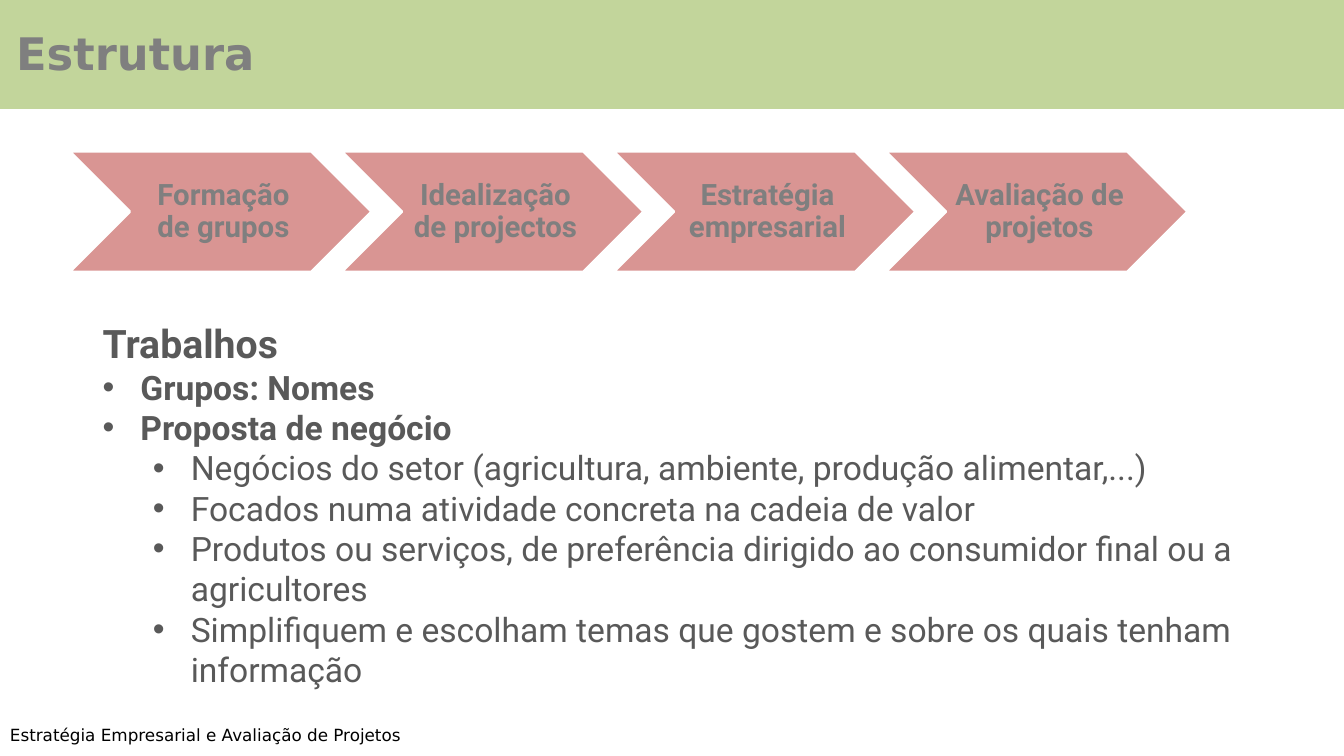
from pptx import Presentation
from pptx.dml.color import RGBColor as Rgb
from pptx.enum.shapes import MSO_SHAPE as Kind
from pptx.enum.text import MSO_ANCHOR as Anchor, PP_ALIGN as Align
from pptx.oxml.ns import qn
from pptx.util import Pt
from lxml.etree import SubElement as Sub

HUES = {"green": "C2D59B", "rose": "D99593", "gray": "7F7F7F",
        "dark": "595959", "black": "000000", "white": "FFFFFF"}
STEPS = ["Formação de grupos", "Idealização de projectos",
         "Estratégia empresarial", "Avaliação de projetos"]
TASKS = [
    (0, "Grupos: Nomes"),
    (0, "Proposta de negócio"),
    (1, "Negócios do setor (agricultura, ambiente, produção alimentar,...)"),
    (1, "Focados numa atividade concreta na cadeia de valor"),
    (1, "Produtos ou serviços, de preferência dirigido ao consumidor final ou a agricultores"),
    (1, "Simplifiquem e escolham temas que gostem e sobre os quais tenham informação"),
]


class Deck:
    sans = "DejaVu Sans"
    body = "Roboto"

    def __init__(self, wide, high):
        self.deck = Presentation()
        self.deck.slide_width, self.deck.slide_height = Pt(wide), Pt(high)
        self.slide = self.deck.slides.add_slide(self.deck.slide_layouts[5])

    def hue(self, name):
        return Rgb.from_string(HUES[name])

    def style(self, para, text, size, face, hue, bold=False, align=Align.LEFT):
        para.text = text
        para.alignment = align
        font = para.font
        font.size, font.name, font.bold = Pt(size), face, bold
        font.color.rgb = self.hue(hue)

    def shape(self, kind, box, fill, line):
        item = self.slide.shapes.add_shape(kind, *map(Pt, box))
        item.shadow.inherit = False
        item.fill.solid()
        item.fill.fore_color.rgb = self.hue(fill)
        item.line.color.rgb = self.hue(line)
        item.line.width = Pt(2)
        return item

    def text(self, box):
        frame = self.slide.shapes.add_textbox(*map(Pt, box)).text_frame
        frame.word_wrap = True
        return frame

    def title(self, text, box):
        item = self.slide.shapes.title
        item.left, item.top, item.width, item.height = map(Pt, box)
        frame = item.text_frame
        frame.word_wrap = True
        frame.vertical_anchor = Anchor.TOP
        self.style(frame.paragraphs[0], text, 32, self.sans, "gray", True)
        self.slide.shapes._spTree.append(item._element)

    def step(self, text, left, top):
        arrow = self.shape(Kind.CHEVRON, (left, top, 216, 86.4), "rose", "white")
        arrow.adjustments[0] = 0.5
        frame = self.text((left + 43.2, top, 129.6, 86.4))
        frame.vertical_anchor = Anchor.MIDDLE
        frame.margin_left = Pt(6.5)
        frame.margin_right = frame.margin_top = frame.margin_bottom = Pt(2.2)
        para = frame.paragraphs[0]
        para.line_spacing = 0.9
        self.style(para, text, 21, self.body, "gray", True, Align.CENTER)

    def bullet(self, frame, level, text):
        para = frame.add_paragraph()
        para.level = level
        props = para._p.get_or_add_pPr()
        props.set("marL", str(Pt(27 + 36 * level)))
        props.set("indent", str(Pt(-27)))
        tint = Sub(props, qn("a:buClr"))
        Sub(tint, qn("a:srgbClr"), val=HUES["dark"])
        Sub(props, qn("a:buFont"), typeface="Arial")
        Sub(props, qn("a:buChar"), char="•")
        self.style(para, text, 24, self.body, "dark", level == 0)


def main():
    deck = Deck(960, 540)
    deck.shape(Kind.RECTANGLE, (-3.6, -2.2, 963.6, 79.2), "green", "green")
    foot = deck.text((0, 514, 300, 21.8))
    deck.style(foot.paragraphs[0], "Estratégia Empresarial e Avaliação de Projetos",
               12, deck.sans, "black")
    deck.title("Estrutura", (4.3, 15.1, 200, 46))
    for rank, name in enumerate(STEPS):
        deck.step(name, 49.5 + 194.3 * rank, 108)
    work = deck.text((66.2, 224.8, 862, 332))
    deck.style(work.paragraphs[0], "Trabalhos", 28, deck.body, "dark", True)
    for level, task in TASKS:
        deck.bullet(work, level, task)
    deck.deck.save("out.pptx")


if __name__ == "__main__":
    main()
